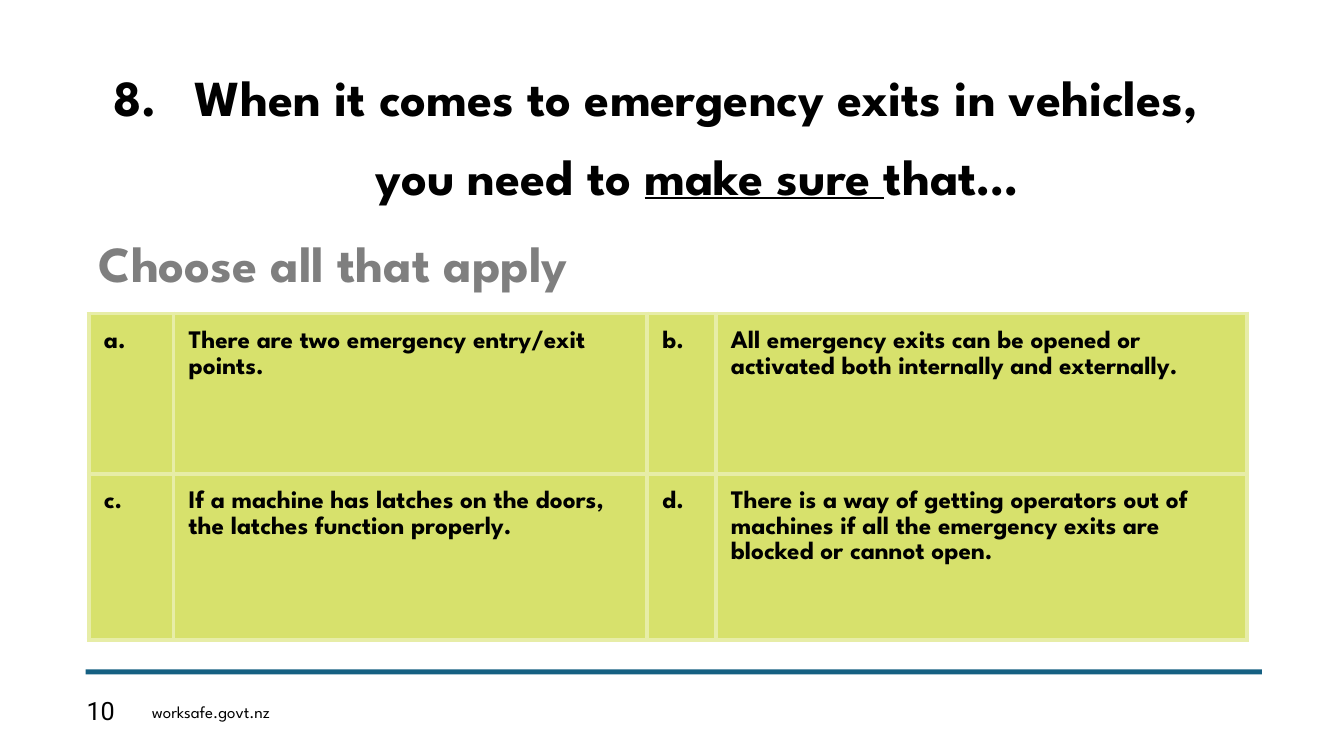
from lxml.etree import SubElement
from pptx import Presentation
from pptx.dml.color import RGBColor
from pptx.enum.shapes import MSO_SHAPE
from pptx.enum.text import MSO_ANCHOR, MSO_AUTO_SIZE, PP_ALIGN
from pptx.oxml.ns import qn
from pptx.util import Pt

# Content
TITLE = [
    ("When it comes to emergency exits in vehicles, you need to ", False),
    ("make sure ", True),
    ("that…", False),
]
QUESTION_NUMBER = 8
PROMPT = "Choose all that apply"
ANSWERS = [
    ["a.", "There are two emergency entry/exit points.",
     "b.", "All emergency exits can be opened or activated both internally and externally."],
    ["c.", "If a machine has latches on the doors, the latches function properly.",
     "d.", "There is a way of getting operators out of machines if all the "
           "emergency exits are blocked or cannot open."],
]
PAGE_NUMBER = "10"
WEBSITE = "worksafe.govt.nz"

# Style
BLACK = RGBColor(0x00, 0x00, 0x00)
GREY = RGBColor(0x7F, 0x7F, 0x7F)
LIME = RGBColor(0xD7, 0xE1, 0x6C)
PALE_LIME = RGBColor(0xE7, 0xED, 0xA7)
TEAL = RGBColor(0x15, 0x60, 0x82)
HEADING_FONT = "League Spartan"
NUMBER_FONT = "Roboto"

# Layout, in points
LEFT = 63.4
COLUMN_WIDTHS = [60.5, 338.4, 49, 379.4]
ROW_HEIGHTS = [114.5, 118.8]
CELL_MARGIN = 10.8
HANGING_INDENT = 58.3


def set_font(font, size, color=BLACK, bold=False, name=HEADING_FONT):
    font.name, font.size, font.bold = name, Pt(size), bold
    font.color.rgb = color


def add_label(page, text, left, top, width, height, size, **style):
    box = page.shapes.add_textbox(Pt(left), Pt(top), Pt(width), Pt(height))
    box.text_frame.word_wrap = True
    box.text_frame.vertical_anchor = MSO_ANCHOR.MIDDLE
    box.text_frame.text = text
    para = box.text_frame.paragraphs[0]
    set_font(para.runs[0].font, size, **style)
    return para


def add_borders(cell, color, width):
    properties = cell._tc.get_or_add_tcPr()
    for position, side in enumerate(("lnL", "lnR", "lnT", "lnB")):
        line = SubElement(properties, qn("a:" + side), w=str(Pt(width)))
        fill = SubElement(line, qn("a:solidFill"))
        SubElement(fill, qn("a:srgbClr"), val=str(color))
        properties.insert(position, line)


deck = Presentation()
deck.slide_width, deck.slide_height = Pt(960), Pt(540)
page = deck.slides.add_slide(deck.slide_layouts[5])

# Footer
add_label(page, PAGE_NUMBER, 54.7, 493.2, 46.8, 28.8, 18, name=NUMBER_FONT)
add_label(page, WEBSITE, 101.5, 495.4, 324, 25.9, 12)
rule = page.shapes.add_shape(MSO_SHAPE.RECTANGLE, Pt(61.2), Pt(478.1), Pt(840.2), Pt(3.6))
rule.shadow.inherit = False
rule.fill.solid()
rule.fill.fore_color.rgb = TEAL
rule.line.fill.background()

# Numbered question
title = page.shapes.title
title.left, title.top, title.width, title.height = Pt(LEFT), Pt(43.2), Pt(810), Pt(94.3)
frame = title.text_frame
frame.auto_size = MSO_AUTO_SIZE.NONE
frame.word_wrap = True
frame.vertical_anchor = MSO_ANCHOR.MIDDLE
frame.margin_left = frame.margin_right = frame.margin_top = frame.margin_bottom = 0
para = frame.paragraphs[0]
properties = para._p.get_or_add_pPr()
properties.set("marL", str(Pt(HANGING_INDENT)))
properties.set("indent", str(-Pt(HANGING_INDENT)))
SubElement(properties, qn("a:buFont"), typeface=HEADING_FONT)
SubElement(properties, qn("a:buAutoNum"), type="arabicPeriod", startAt=str(QUESTION_NUMBER))
para.alignment = PP_ALIGN.CENTER
para.line_spacing = 1.3
for text, underlined in TITLE:
    span = para.add_run()
    span.text = text
    set_font(span.font, 36, bold=True)
    span.font.underline = underlined

# Answer table
table = page.shapes.add_table(
    len(ROW_HEIGHTS), len(COLUMN_WIDTHS), Pt(LEFT), Pt(223.9),
    Pt(sum(COLUMN_WIDTHS)), Pt(sum(ROW_HEIGHTS))).table
for column, width in zip(table.columns, COLUMN_WIDTHS):
    column.width = Pt(width)
for row, height, answers in zip(table.rows, ROW_HEIGHTS, ANSWERS):
    row.height = Pt(height)
    for index, (cell, answer) in enumerate(zip(row.cells, answers)):
        cell.fill.solid()
        cell.fill.fore_color.rgb = LIME
        add_borders(cell, PALE_LIME, 3)
        cell.margin_left = cell.margin_right = Pt(CELL_MARGIN)
        cell.margin_top = cell.margin_bottom = Pt(CELL_MARGIN)
        cell.text_frame.text = answer
        para = cell.text_frame.paragraphs[0]
        para.line_spacing = 1.1
        para.space_after = Pt(6 if index else 10)
        set_font(para.runs[0].font, 18, bold=True)

# Prompt
prompt = add_label(page, PROMPT, LEFT, 155.5, 479.5, 51.1, 36, color=GREY, bold=True)
prompt.line_spacing = 1.3

deck.save("out.pptx")
